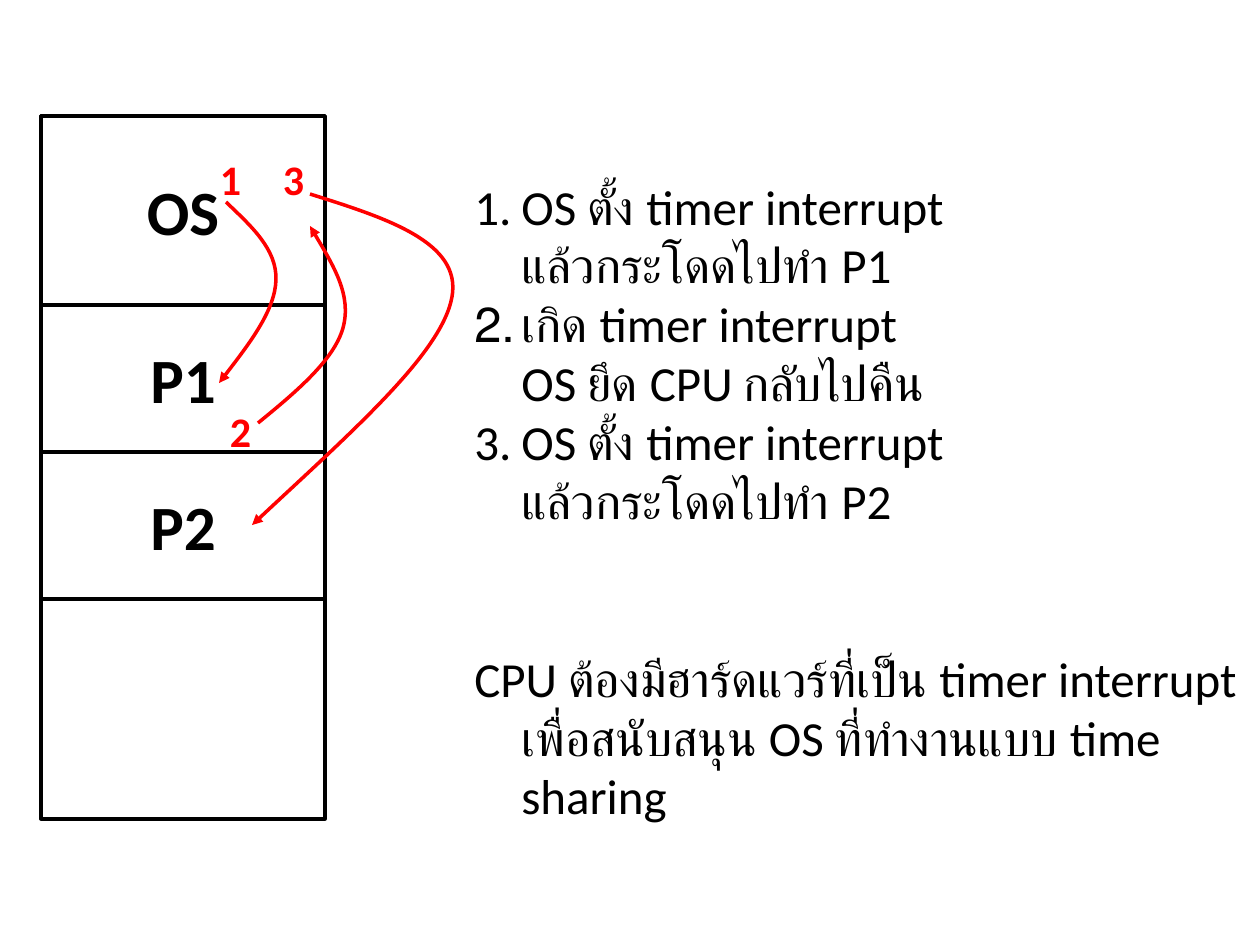
from lxml.etree import SubElement
from pptx import Presentation
from pptx.dml.color import RGBColor
from pptx.enum.shapes import MSO_SHAPE
from pptx.enum.text import MSO_ANCHOR, PP_ALIGN
from pptx.oxml.ns import qn
from pptx.util import Emu, Pt

SCALE = 914400 / 126  # EMU per px
BLACK, RED = "000000", "FF0000"

MEMORY_LEFT, MEMORY_TOP, MEMORY_WIDTH, MEMORY_HEIGHT = 41, 116, 284, 703
SEGMENTS = [("OS", 189), ("P1", 147), ("P2", 147)]

# Start point, then control, control, end for each Bezier segment
JUMPS = [
    [(226, 202), (251, 226), (277, 249), (276, 280), (275, 310), (247, 347), (219, 383)],
    [(258, 423), (296, 392), (334, 360), (343, 328), (352, 295), (330, 260), (310, 226)],
    [(310, 194), (386, 218), (462, 242), (452, 297), (442, 353), (348, 435), (252, 525)],
]
STEP_LABELS = [("1", 199, 147), ("2", 209, 399), ("3", 262, 147)]
STEP_LABEL_SIZE = 63

STEPS = [
    "OS ตั้ง timer interrupt\nแล้วกระโดดไปทำ P1",
    "เกิด timer interrupt\nOS ยึด CPU กลับไปคืน",
    "OS ตั้ง timer interrupt\nแล้วกระโดดไปทำ P2",
]
CONCLUSION = ("CPU ต้องมีฮาร์ดแวร์ที่เป็น timer interrupt\n"
              "เพื่อสนับสนุน OS ที่ทำงานแบบ time sharing")
EXPLANATION_BOX = (462, 170, 798, 606)
HANGING_INDENT = 47


def px(length):
    return Emu(round(length * SCALE))


def color(value):
    return RGBColor.from_string(value)


def style_text(paragraph, size, font_color, bold=False):
    font = paragraph.font
    font.name, font.size, font.bold = "Calibri", Pt(size), bold
    font.color.rgb = color(font_color)


def style_outline(shape, line_color):
    shape.shadow.inherit = False
    shape.fill.background()
    shape.line.color.rgb = color(line_color)
    shape.line.width = Pt(2)


def add_segment(slide, top, height, label=""):
    shape = slide.shapes.add_shape(
        MSO_SHAPE.RECTANGLE, px(MEMORY_LEFT), px(top), px(MEMORY_WIDTH), px(height))
    style_outline(shape, BLACK)
    if label:
        shape.text_frame.vertical_anchor = MSO_ANCHOR.MIDDLE
        paragraph = shape.text_frame.paragraphs[0]
        paragraph.text = label
        paragraph.alignment = PP_ALIGN.CENTER
        style_text(paragraph, 36, BLACK, bold=True)


def add_text_box(slide, left, top, width, height):
    frame = slide.shapes.add_textbox(px(left), px(top), px(width), px(height)).text_frame
    frame.word_wrap = True
    return frame


def add_curved_arrow(slide, points):
    """Draw a freeform through the points and turn each three lines into a Bezier."""
    builder = slide.shapes.build_freeform(*points[0], scale=SCALE)
    builder.add_line_segments(points[1:], close=False)
    shape = builder.convert_to_shape()
    style_outline(shape, RED)
    outline = next(shape.element.iter(qn("a:path")))
    lines = outline.findall(qn("a:lnTo"))
    for start in range(0, len(lines), 3):
        curve = SubElement(outline, qn("a:cubicBezTo"))
        for line in lines[start:start + 3]:
            curve.append(line[0])
            outline.remove(line)
    SubElement(shape.line._get_or_add_ln(), qn("a:tailEnd"), type="triangle")


def add_explanation(slide):
    frame = add_text_box(slide, *EXPLANATION_BOX)
    for index, text in enumerate(STEPS + [CONCLUSION]):
        paragraph = frame.add_paragraph() if index else frame.paragraphs[0]
        paragraph.text = text
        style_text(paragraph, 28, BLACK)
        properties = paragraph._p.get_or_add_pPr()
        properties.set("marL", str(px(HANGING_INDENT)))
        properties.set("indent", str(-px(HANGING_INDENT)))
        if index < len(STEPS):
            number = properties.makeelement(qn("a:buAutoNum"), {"type": "arabicPeriod"})
            properties.find(qn("a:defRPr")).addprevious(number)
        else:
            paragraph.space_before = Pt(68)


def main():
    presentation = Presentation()
    presentation.slide_width, presentation.slide_height = px(1260), px(945)
    slide = presentation.slides.add_slide(presentation.slide_layouts[6])

    add_segment(slide, MEMORY_TOP, MEMORY_HEIGHT)
    top = MEMORY_TOP
    for label, height in SEGMENTS:
        add_segment(slide, top, height, label)
        top += height

    for points in JUMPS:
        add_curved_arrow(slide, points)
    for label, left, label_top in STEP_LABELS:
        frame = add_text_box(slide, left, label_top, STEP_LABEL_SIZE, STEP_LABEL_SIZE)
        paragraph = frame.paragraphs[0]
        paragraph.text = label
        paragraph.alignment = PP_ALIGN.CENTER
        style_text(paragraph, 24, RED, bold=True)

    add_explanation(slide)
    presentation.save("out.pptx")


if __name__ == "__main__":
    main()
